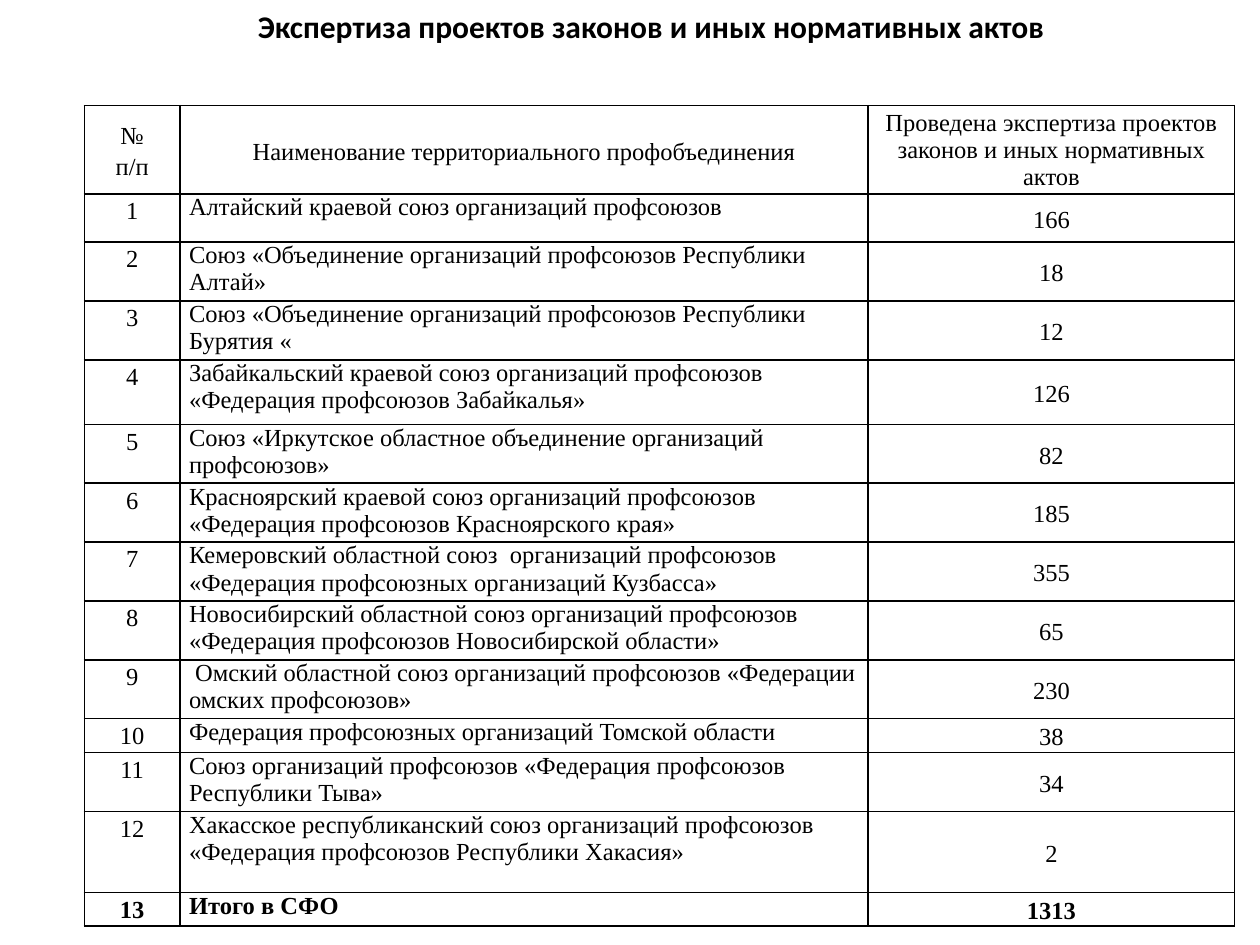
"""Build a slide with a table of expert reviews of draft laws by regional union."""
from lxml import etree
from pptx import Presentation
from pptx.dml.color import RGBColor
from pptx.enum.text import MSO_ANCHOR, PP_ALIGN
from pptx.oxml.ns import qn
from pptx.util import Cm, Pt

LEFT, CENTER = PP_ALIGN.LEFT, PP_ALIGN.CENTER
TOP, MIDDLE = MSO_ANCHOR.TOP, MSO_ANCHOR.MIDDLE

COLORS = {"ink": "000000", "paper": "FFFFFF"}
TITLE = "Экспертиза проектов законов и иных нормативных актов"
HEADER = (
    "№\nп/п",
    "Наименование территориального профобъединения",
    "Проведена экспертиза проектов законов и иных нормативных актов",
)
UNIONS = [
    ("Алтайский краевой союз организаций профсоюзов", 166),
    ("Союз «Объединение организаций профсоюзов Республики Алтай»", 18),
    ("Союз «Объединение организаций профсоюзов Республики Бурятия «", 12),
    ("Забайкальский краевой союз организаций профсоюзов «Федерация профсоюзов Забайкалья»", 126),
    ("Союз «Иркутское областное объединение организаций профсоюзов»", 82),
    ("Красноярский краевой союз организаций профсоюзов «Федерация профсоюзов Красноярского края»", 185),
    ("Кемеровский областной союз  организаций профсоюзов «Федерация профсоюзных организаций Кузбасса»", 355),
    ("Новосибирский областной союз организаций профсоюзов «Федерация профсоюзов Новосибирской области»", 65),
    (" Омский областной союз организаций профсоюзов «Федерации омских профсоюзов»", 230),
    ("Федерация профсоюзных организаций Томской области", 38),
    ("Союз организаций профсоюзов «Федерация профсоюзов Республики Тыва»", 34),
    ("Хакасское республиканский союз организаций профсоюзов «Федерация профсоюзов Республики Хакасия»", 2),
    ("Итого в СФО", 1313),
]
COLUMN_WIDTHS = (1.93, 13.87, 7.39)
USUAL_HEIGHT = 1.17
ROW_HEIGHTS = {0: 1.78, 1: 0.97, 4: 1.3, 10: 0.66, 12: 1.63, 13: 0.64}
COLUMN_FORMATS = ((CENTER, TOP, 1.15), (LEFT, TOP, 1.0), (CENTER, MIDDLE, 1.15))
HEADER_FORMATS = ((CENTER, MIDDLE, 1.15), (CENTER, MIDDLE, 1.15), (CENTER, MIDDLE, 1.0))
CELL_MARGINS = {"margin_left": Cm(0.18), "margin_right": Cm(0.18), "margin_top": 0, "margin_bottom": 0}
TITLE_FRAME = {"word_wrap": True, "vertical_anchor": MIDDLE, "margin_top": 0, "margin_bottom": 0}


def set_all(target, values):
    for name, value in values.items():
        setattr(target, name, value)


def write(frame, text, font, align, spacing):
    frame.text = text
    for para in frame.paragraphs:
        set_all(para, {"alignment": align, "line_spacing": spacing})
        for span in para.runs:
            set_all(span.font, font)
            span.font.color.rgb = RGBColor.from_string(COLORS["ink"])


def add_borders(cell):
    properties = cell._tc.get_or_add_tcPr()
    for side in ("a:lnL", "a:lnR", "a:lnT", "a:lnB"):
        line = etree.SubElement(properties, qn(side), w=str(Pt(1)))
        fill = etree.SubElement(line, qn("a:solidFill"))
        etree.SubElement(fill, qn("a:srgbClr"), val=COLORS["ink"])


def add_title(page):
    box = page.shapes.add_textbox(Cm(1.7), Cm(0.15), Cm(22.86), Cm(0.76))
    set_all(box.text_frame, TITLE_FRAME)
    write(box.text_frame, TITLE, {"name": "Calibri", "size": Pt(18), "bold": True}, CENTER, 1.0)


def add_review_table(page):
    rows = [HEADER] + [(str(n), name, str(count)) for n, (name, count) in enumerate(UNIONS, 1)]
    heights = [ROW_HEIGHTS.get(i, USUAL_HEIGHT) for i in range(len(rows))]
    table = page.shapes.add_table(
        len(rows), len(HEADER), Cm(1.7), Cm(2.13), Cm(sum(COLUMN_WIDTHS)), Cm(sum(heights))
    ).table
    set_all(table, {"first_row": False, "horz_banding": False})
    for column, width in zip(table.columns, COLUMN_WIDTHS):
        column.width = Cm(width)
    for i, (texts, height) in enumerate(zip(rows, heights)):
        table.rows[i].height = Cm(height)
        formats = COLUMN_FORMATS if i else HEADER_FORMATS
        font = {"name": "Times New Roman", "size": Pt(14), "bold": i == len(UNIONS)}
        for j, (text, (align, anchor, spacing)) in enumerate(zip(texts, formats)):
            cell = table.cell(i, j)
            set_all(cell, {**CELL_MARGINS, "vertical_anchor": anchor})
            write(cell.text_frame, text, font, align, spacing)
            add_borders(cell)
            cell.fill.solid()
            cell.fill.fore_color.rgb = RGBColor.from_string(COLORS["paper"])


def main():
    deck = Presentation()
    set_all(deck, {"slide_width": Cm(25.4), "slide_height": Cm(19.05)})
    page = deck.slides.add_slide(deck.slide_layouts[6])
    add_title(page)
    add_review_table(page)
    deck.save("out.pptx")


if __name__ == "__main__":
    main()
